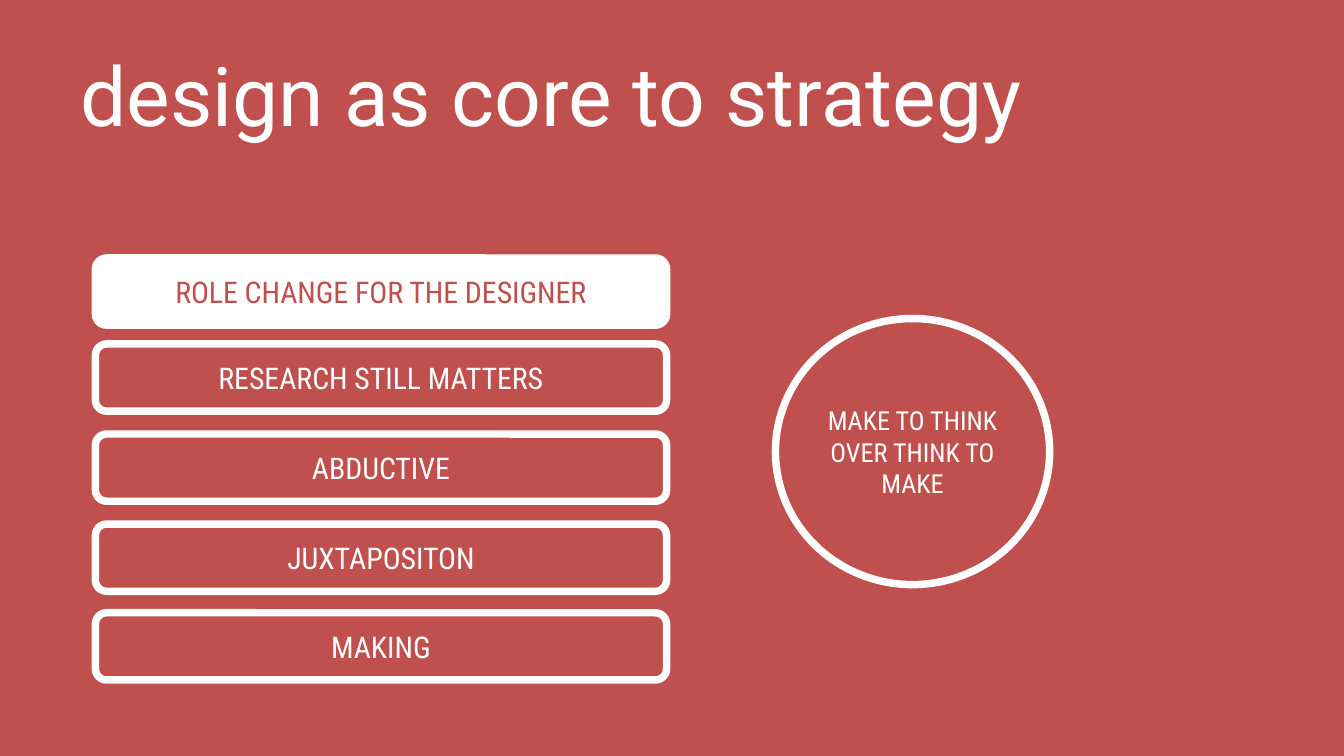
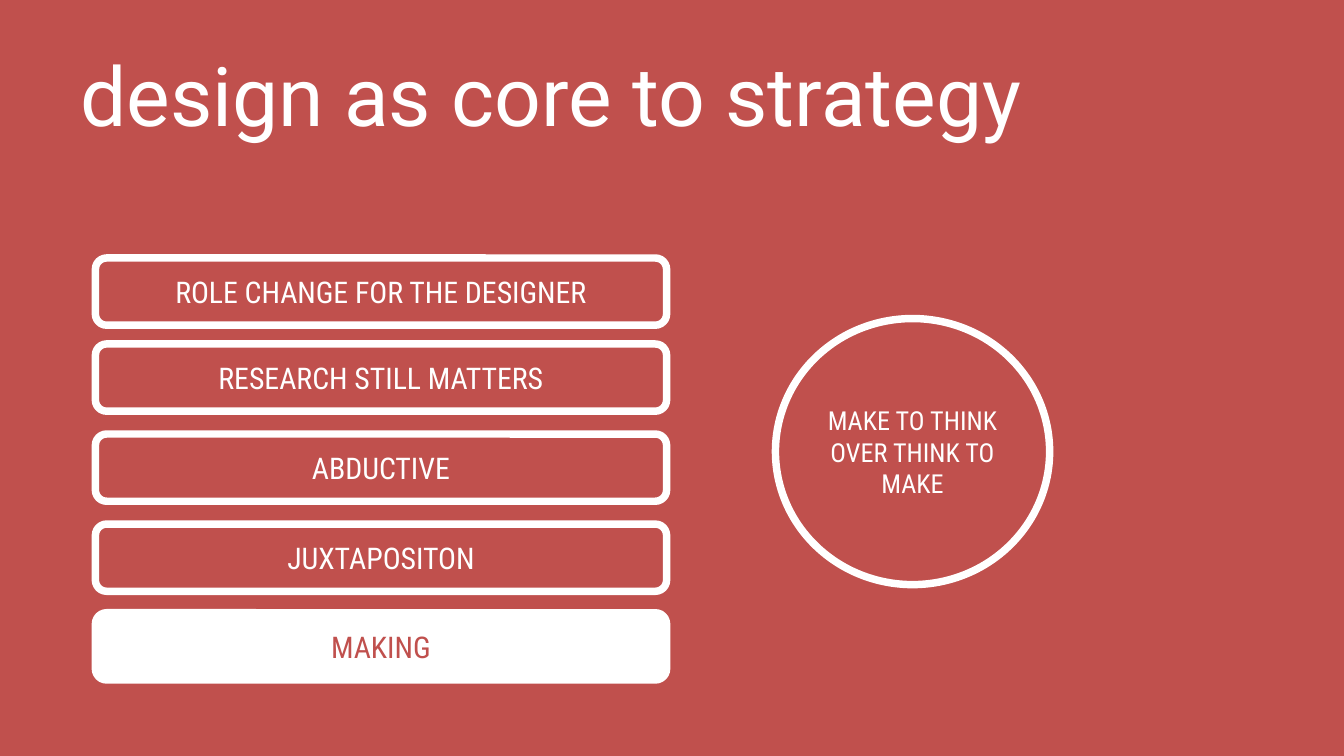
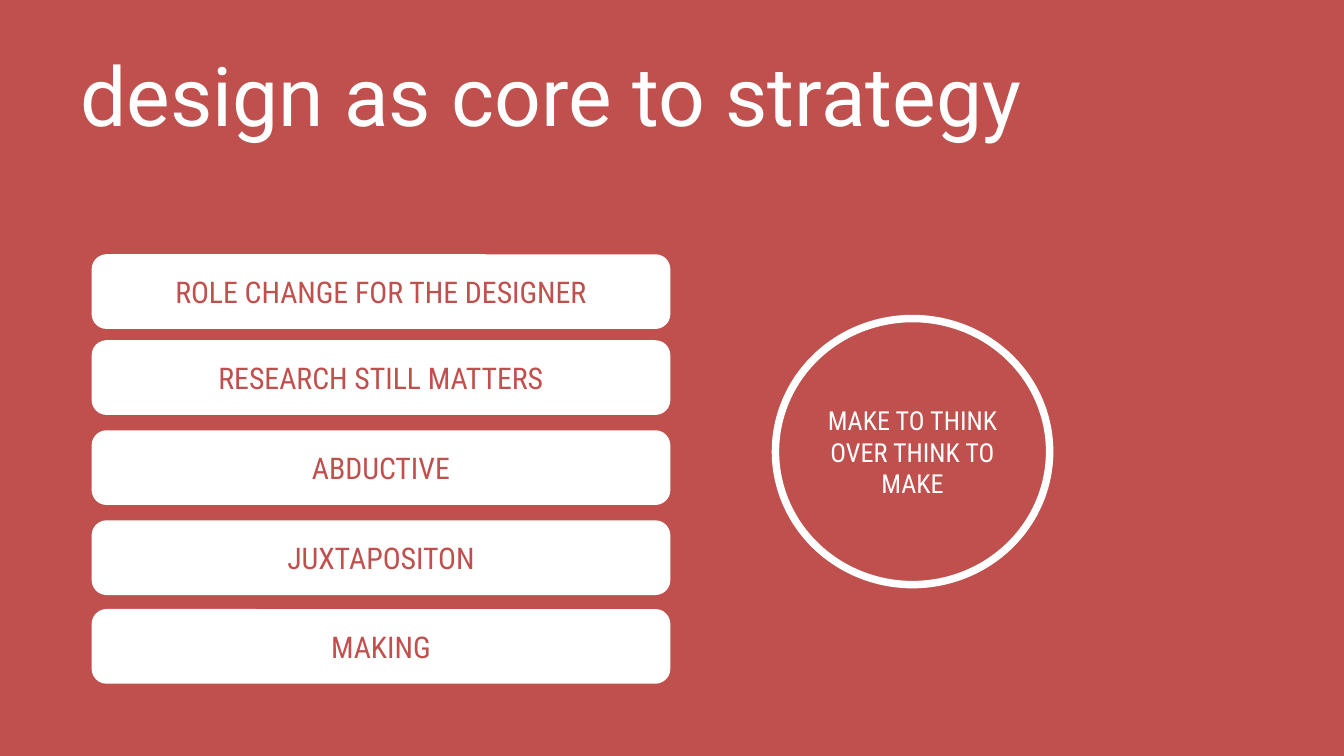
from typing import NamedTuple

from pptx import Presentation
from pptx.dml.color import RGBColor
from pptx.enum.shapes import MSO_SHAPE as Shape
from pptx.enum.text import MSO_ANCHOR as Anchor, PP_ALIGN as Align
from pptx.util import Inches, Pt

RED = "C0504D"
WHITE = "FFFFFF"
TITLE_FONT = "Roboto"
BODY_FONT = "Roboto Condensed"

TITLE = "design as core to strategy"
MOTTO = "MAKE TO THINK OVER THINK TO MAKE"


class Box(NamedTuple):
    left: float
    top: float
    width: float
    height: float

    def inches(self) -> list:
        return [Inches(v) for v in self]


class Theme(NamedTuple):
    label: str
    top: float


THEMES = [
    Theme("ROLE CHANGE FOR THE DESIGNER", 1.92),
    Theme("RESEARCH STILL MATTERS", 2.56),
    Theme("ABDUCTIVE", 3.23),
    Theme("JUXTAPOSITON", 3.9),
    Theme("MAKING", 4.56),
]

# Labels shown filled on each slide
HIGHLIGHTS = [
    {"ROLE CHANGE FOR THE DESIGNER"},
    {"MAKING"},
    {theme.label for theme in THEMES},
]


def rgb(color: str) -> RGBColor:
    return RGBColor.from_string(color)


def set_text(sp, text: str, font: str, size: int, color: str, align: Align) -> None:
    tf = sp.text_frame
    tf.word_wrap = True
    tf.vertical_anchor = Anchor.MIDDLE
    p = tf.paragraphs[0]
    p.text = text
    p.alignment = align
    p.font.name = font
    p.font.size = Pt(size)
    p.font.color.rgb = rgb(color)


def add_title(slide) -> None:
    sp = slide.shapes.add_textbox(*Box(0.5, 0.23, 9, 0.94).inches())
    set_text(sp, TITLE, TITLE_FONT, 44, WHITE, Align.LEFT)


def add_outlined(slide, kind: Shape, box: Box, text: str, size: int,
                 filled: bool = False):
    """Add a white-outlined shape; a filled one is white with red text."""
    sp = slide.shapes.add_shape(kind, *box.inches())
    sp.shadow.inherit = False
    sp.line.color.rgb = rgb(WHITE)
    sp.line.width = Pt(4)
    if filled:
        sp.fill.solid()
        sp.fill.fore_color.rgb = rgb(WHITE)
    else:
        sp.fill.background()
    set_text(sp, text, BODY_FONT, size, RED if filled else WHITE, Align.CENTER)
    return sp


def add_motto(slide) -> None:
    sp = add_outlined(slide, Shape.OVAL, Box(5.77, 2.37, 2.04, 1.98), MOTTO, 14)
    tf = sp.text_frame
    tf.margin_left = tf.margin_top = tf.margin_right = tf.margin_bottom = 0


def add_strategy_slide(prs, highlighted: set[str]) -> None:
    slide = prs.slides.add_slide(prs.slide_layouts[6])
    add_title(slide)
    for label, top in THEMES:
        add_outlined(slide, Shape.ROUNDED_RECTANGLE, Box(0.71, top, 4.25, 0.5),
                     label, 16, label in highlighted)
    add_motto(slide)


def main() -> None:
    prs = Presentation()
    prs.slide_width = Inches(10)
    prs.slide_height = Inches(10 * 9 / 16)
    fill = prs.slide_master.background.fill
    fill.solid()
    fill.fore_color.rgb = rgb(RED)
    for highlighted in HIGHLIGHTS:
        add_strategy_slide(prs, highlighted)
    prs.save("out.pptx")


if __name__ == "__main__":
    main()
